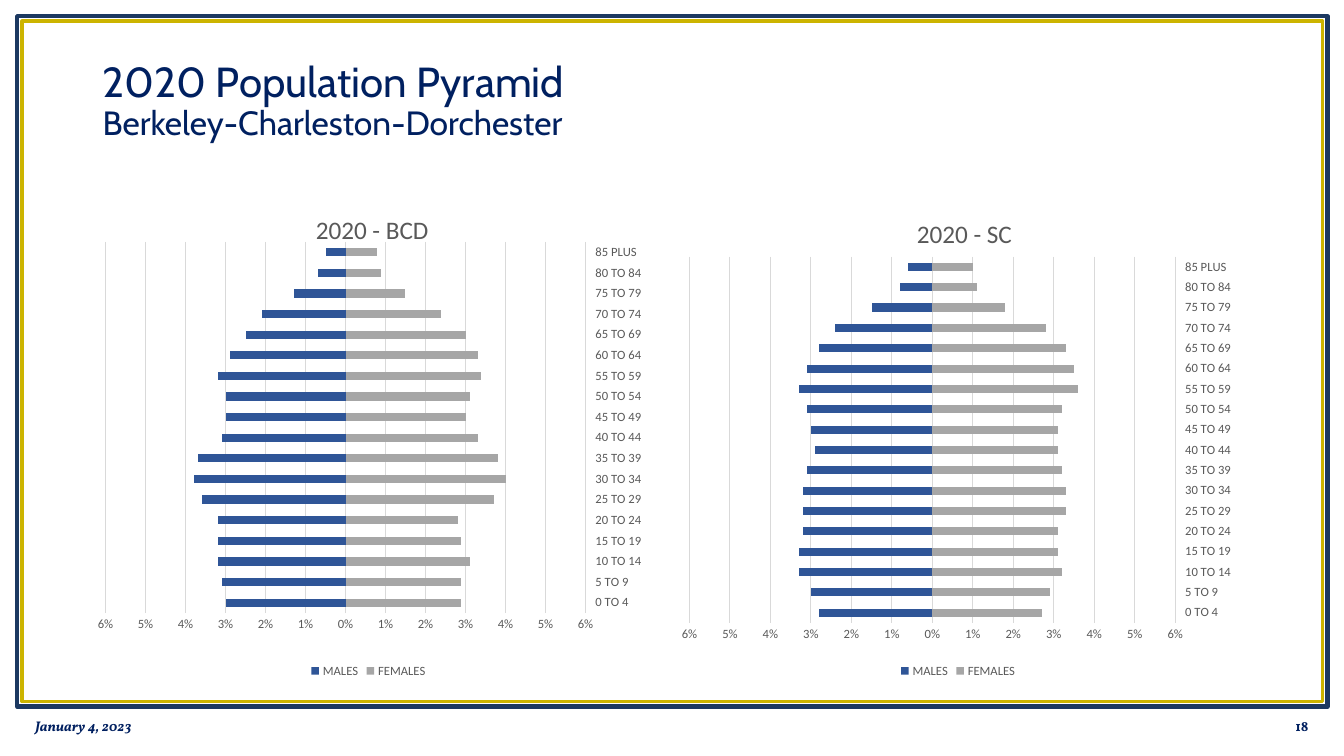
from lxml import etree
from pptx import Presentation
from pptx.chart.data import CategoryChartData
from pptx.dml.color import RGBColor
from pptx.enum.chart import XL_CHART_TYPE as ChartType
from pptx.enum.chart import XL_LEGEND_POSITION as LegendPosition
from pptx.enum.chart import XL_TICK_LABEL_POSITION as LabelPosition
from pptx.enum.chart import XL_TICK_MARK as TickMark
from pptx.enum.shapes import MSO_SHAPE as ShapeType
from pptx.enum.text import MSO_ANCHOR as Anchor
from pptx.enum.text import PP_ALIGN as Align
from pptx.util import Pt

COLORS = {
    "navy": "002060", "frame": "1C3961", "gold": "CCB400", "males": "2F5597",
    "females": "A6A6A6", "label": "595959", "grid": "D9D9D9",
}
FRAMES = [
    ((12.24, 11.52, 936, 493.2), "frame", 3),
    ((15.84, 15.12, 928.8, 486), "gold", 2.5),
]
TITLE_LINES = [("2020 Population Pyramid", 30), ("Berkeley-Charleston-Dorchester", 24)]
FOOTERS = [("January 4, 2023", 18, Align.LEFT, True), ("18", 725.76, Align.RIGHT, False)]
AGES = [f"{age} TO {age + 4}" for age in range(0, 85, 5)] + ["85 PLUS"]
PYRAMIDS = [
    {
        "title": "2020 - BCD",
        "left": 59.04,
        "title_at": {"x": 0.4, "y": 0.04},
        "plot_at": {"x": 0.04, "y": 0.11, "w": 0.84, "h": 0.75},
        "males": [3.0, 3.1, 3.2, 3.2, 3.2, 3.6, 3.8, 3.7, 3.1,
                  3.0, 3.0, 3.2, 2.9, 2.5, 2.1, 1.3, 0.7, 0.5],
        "females": [2.9, 2.9, 3.1, 2.9, 2.8, 3.7, 4.0, 3.8, 3.3,
                    3.0, 3.1, 3.4, 3.3, 3.0, 2.4, 1.5, 0.9, 0.8],
    },
    {
        "title": "2020 - SC",
        "left": 480.24,
        "title_at": {"x": 0.42, "y": 0.05},
        "plot_at": {"x": 0.03, "y": 0.14, "w": 0.85, "h": 0.74},
        "males": [2.8, 3.0, 3.3, 3.3, 3.2, 3.2, 3.2, 3.1, 2.9,
                  3.0, 3.1, 3.3, 3.1, 2.8, 2.4, 1.5, 0.8, 0.6],
        "females": [2.7, 2.9, 3.2, 3.1, 3.1, 3.3, 3.3, 3.2, 3.1,
                    3.1, 3.2, 3.6, 3.5, 3.3, 2.8, 1.8, 1.1, 1.0],
    },
]
CHART_TOP, CHART_WIDTH, CHART_HEIGHT = 133.92, 408.24, 353.52
CHART_NS = "http://schemas.openxmlformats.org/drawingml/2006/chart"


def color(name):
    return RGBColor.from_string(COLORS[name])


def set_font(font, name, size, color_name, bold=False, italic=False):
    font.name, font.size = name, Pt(size)
    font.bold, font.italic = bold, italic
    font.color.rgb = color(color_name)


def set_line(line, color_name, width):
    line.color.rgb = color(color_name)
    line.width = Pt(width)


def add_frame(slide, box, color_name, width):
    frame = slide.shapes.add_shape(ShapeType.RECTANGLE, *map(Pt, box))
    frame.shadow.inherit = False
    frame.fill.background()
    set_line(frame.line, color_name, width)


def add_text(slide, box):
    text_frame = slide.shapes.add_textbox(*map(Pt, box)).text_frame
    text_frame.word_wrap = True
    text_frame.vertical_anchor = Anchor.MIDDLE
    return text_frame.paragraphs[0]


def add_title(slide):
    paragraph = add_text(slide, (66.24, 28.8, 828, 88.56))
    paragraph.line_spacing = 0.9
    for index, (text, size) in enumerate(TITLE_LINES):
        if index:
            paragraph.add_line_break()
        run = paragraph.add_run()
        run.text = text
        set_font(run.font, "Cabin", size, "navy")


def add_footer(slide, text, left, alignment, italic):
    paragraph = add_text(slide, (left, 504, 216, 28.8))
    paragraph.text = text
    paragraph.alignment = alignment
    set_font(paragraph.font, "Vollkorn", 10, "navy", bold=True, italic=italic)


def set_layout(parent, position, settings):
    tag = f"{{{CHART_NS}}}"
    for old_layout in parent.findall(tag + "layout"):
        parent.remove(old_layout)
    layout = etree.Element(tag + "layout")
    manual = etree.SubElement(layout, tag + "manualLayout")
    for name, value in settings.items():
        etree.SubElement(manual, tag + name, val=str(value))
    parent.insert(position, layout)


def add_pyramid(slide, pyramid):
    data = CategoryChartData(number_format="0%;0%")
    data.categories = AGES
    for group, sign in (("males", -1), ("females", 1)):
        data.add_series(group.upper(), [round(sign * share / 100, 3) for share in pyramid[group]])
    chart = slide.shapes.add_chart(
        ChartType.BAR_STACKED, Pt(pyramid["left"]), Pt(CHART_TOP),
        Pt(CHART_WIDTH), Pt(CHART_HEIGHT), data,
    ).chart
    set_font(chart.font, "Calibri", 9, "label")

    chart.has_title = True
    paragraph = chart.chart_title.text_frame.paragraphs[0]
    paragraph.text = pyramid["title"]
    set_font(paragraph.font, "Calibri", 18, "label")
    edges = {"xMode": "edge", "yMode": "edge"}
    title = chart.chart_title._element
    set_layout(title, 1, edges | pyramid["title_at"])
    inner = {"layoutTarget": "inner"} | edges
    set_layout(title.getparent().find(f"{{{CHART_NS}}}plotArea"), 0, inner | pyramid["plot_at"])

    chart.has_legend = True
    chart.legend.position = LegendPosition.BOTTOM
    chart.legend.include_in_layout = False
    set_font(chart.legend.font, "Calibri", 9, "label")

    ages, shares = chart.category_axis, chart.value_axis
    for axis in (ages, shares):
        axis.major_tick_mark = axis.minor_tick_mark = TickMark.NONE
        set_font(axis.tick_labels.font, "Calibri", 9, "label")
    ages.tick_label_position = LabelPosition.HIGH
    set_line(ages.format.line, "grid", 0.75)
    shares.minimum_scale, shares.maximum_scale, shares.major_unit = -0.06, 0.06, 0.01
    shares.tick_labels.number_format = "0%;0%"
    shares.tick_labels.number_format_is_linked = False
    shares.format.line.fill.background()
    set_line(shares.major_gridlines.format.line, "grid", 0.75)

    plot = chart.plots[0]
    plot.gap_width, plot.overlap = 150, 100
    plot.vary_by_categories = False
    for series in plot.series:
        series.invert_if_negative = False
        series.format.fill.solid()
        series.format.fill.fore_color.rgb = color(series.name.lower())


def main():
    """Build the population pyramid slide."""
    presentation = Presentation()
    presentation.slide_width, presentation.slide_height = Pt(960), Pt(540)
    slide = presentation.slides.add_slide(presentation.slide_layouts[6])
    for frame in FRAMES:
        add_frame(slide, *frame)
    add_title(slide)
    for footer in FOOTERS:
        add_footer(slide, *footer)
    for pyramid in PYRAMIDS:
        add_pyramid(slide, pyramid)
    presentation.save("out.pptx")


if __name__ == "__main__":
    main()
